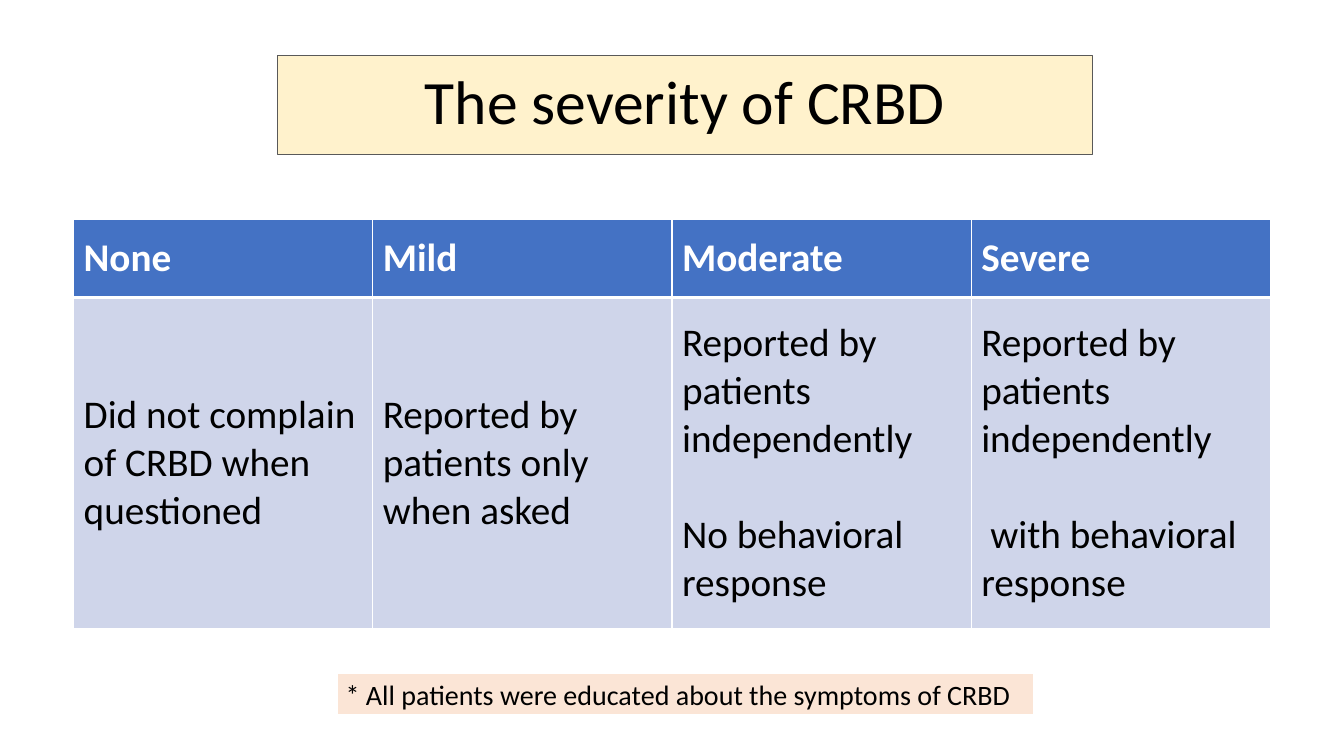
from lxml.etree import SubElement
from pptx import Presentation
from pptx.dml.color import RGBColor
from pptx.enum.shapes import MSO_SHAPE
from pptx.enum.text import MSO_ANCHOR, PP_ALIGN
from pptx.oxml.ns import qn
from pptx.util import Inches, Pt

WHITE = RGBColor(0xFF, 0xFF, 0xFF)
BLACK = RGBColor(0, 0, 0)
GREY = RGBColor(0x59, 0x59, 0x59)
CREAM = RGBColor(0xFF, 0xF2, 0xCC)
PEACH = RGBColor(0xFB, 0xE5, 0xD6)
BLUE = RGBColor(0x44, 0x72, 0xC4)
PALE_BLUE = RGBColor(0xCF, 0xD5, 0xEA)

SEVERITY = [
    ("None", ["Did not complain of CRBD when questioned"], 0),
    ("Mild", ["Reported by patients only when asked"], 0),
    ("Moderate", ["Reported by patients independently", "No behavioral response"], 0),
    ("Severe", ["Reported by patients independently", "with behavioral response"], 0.09),
]


class SlideBuilder:
    font = "Calibri"
    cell_size = 28
    cell_gap = 34
    grid = 100

    def __init__(self, prs):
        self.slide = prs.slides.add_slide(prs.slide_layouts[6])
        self.col = prs.slide_width / self.grid
        self.row = prs.slide_height / self.grid

    def box(self, x, y, w, h):
        return (round(x * self.col), round(y * self.row),
                round(w * self.col), round(h * self.row))

    def run(self, p, text, size, color=BLACK, bold=False):
        r = p.add_run()
        r.text = text
        r.font.name = self.font
        r.font.size = Pt(size)
        r.font.bold = bold
        r.font.color.rgb = color

    def panel(self, place, text, size, fill, line, width, align, anchor, spacing=1.0):
        sp = self.slide.shapes.add_shape(MSO_SHAPE.RECTANGLE, *self.box(*place))
        sp.shadow.inherit = False
        sp.fill.solid()
        sp.fill.fore_color.rgb = fill
        sp.line.color.rgb = line
        sp.line.width = Pt(width)
        tf = sp.text_frame
        tf.word_wrap = True
        tf.vertical_anchor = anchor
        p = tf.paragraphs[0]
        p.alignment = align
        p.line_spacing = spacing
        self.run(p, text, size)

    def cell(self, cell, texts, fill, color, bold, edges, indent=0):
        tc_pr = cell._tc.get_or_add_tcPr()
        for side, width in edges.items():
            ln = SubElement(tc_pr, qn(f"a:ln{side}"), w=str(Pt(width)))
            SubElement(SubElement(ln, qn("a:solidFill")), qn("a:srgbClr"), val=str(WHITE))
        cell.fill.solid()
        cell.fill.fore_color.rgb = fill
        cell.vertical_anchor = MSO_ANCHOR.MIDDLE
        tf = cell.text_frame
        for i, text in enumerate(texts):
            p = tf.add_paragraph() if i else tf.paragraphs[0]
            if i:
                p.space_before = Pt(self.cell_gap)
                p._p.get_or_add_pPr().set("indent", str(Inches(indent)))
            self.run(p, text, self.cell_size, color, bold)

    def table(self, place, heights, columns):
        frame = self.slide.shapes.add_table(len(heights), len(columns), *self.box(*place))
        table = frame.table
        for table_row, height in zip(table.rows, heights):
            table_row.height = round(height * self.row)
        head_edges = {"L": 1, "R": 1, "T": 1, "B": 3}
        body_edges = {"L": 1, "R": 1, "T": 3, "B": 1}
        for c, (heading, texts, indent) in enumerate(columns):
            self.cell(table.cell(0, c), [heading], BLUE, WHITE, True, head_edges)
            self.cell(table.cell(1, c), texts, PALE_BLUE, BLACK, False, body_edges, indent)


def main():
    prs = Presentation()
    prs.slide_width = Inches(13.33)
    prs.slide_height = Inches(7.5)
    s = SlideBuilder(prs)
    s.panel((20.63, 7.33, 60.69, 13.07), "The severity of CRBD", 44,
            CREAM, GREY, 0.75, PP_ALIGN.CENTER, MSO_ANCHOR.MIDDLE, 0.9)
    s.table((5.48, 29.07, 89.05, 54.13), (10.27, 43.86), SEVERITY)
    s.panel((24.98, 88.93, 52.06, 5.87),
            "* All patients were educated about the symptoms of CRBD", 20,
            PEACH, WHITE, 3, PP_ALIGN.LEFT, MSO_ANCHOR.TOP)
    prs.save("out.pptx")


if __name__ == "__main__":
    main()
